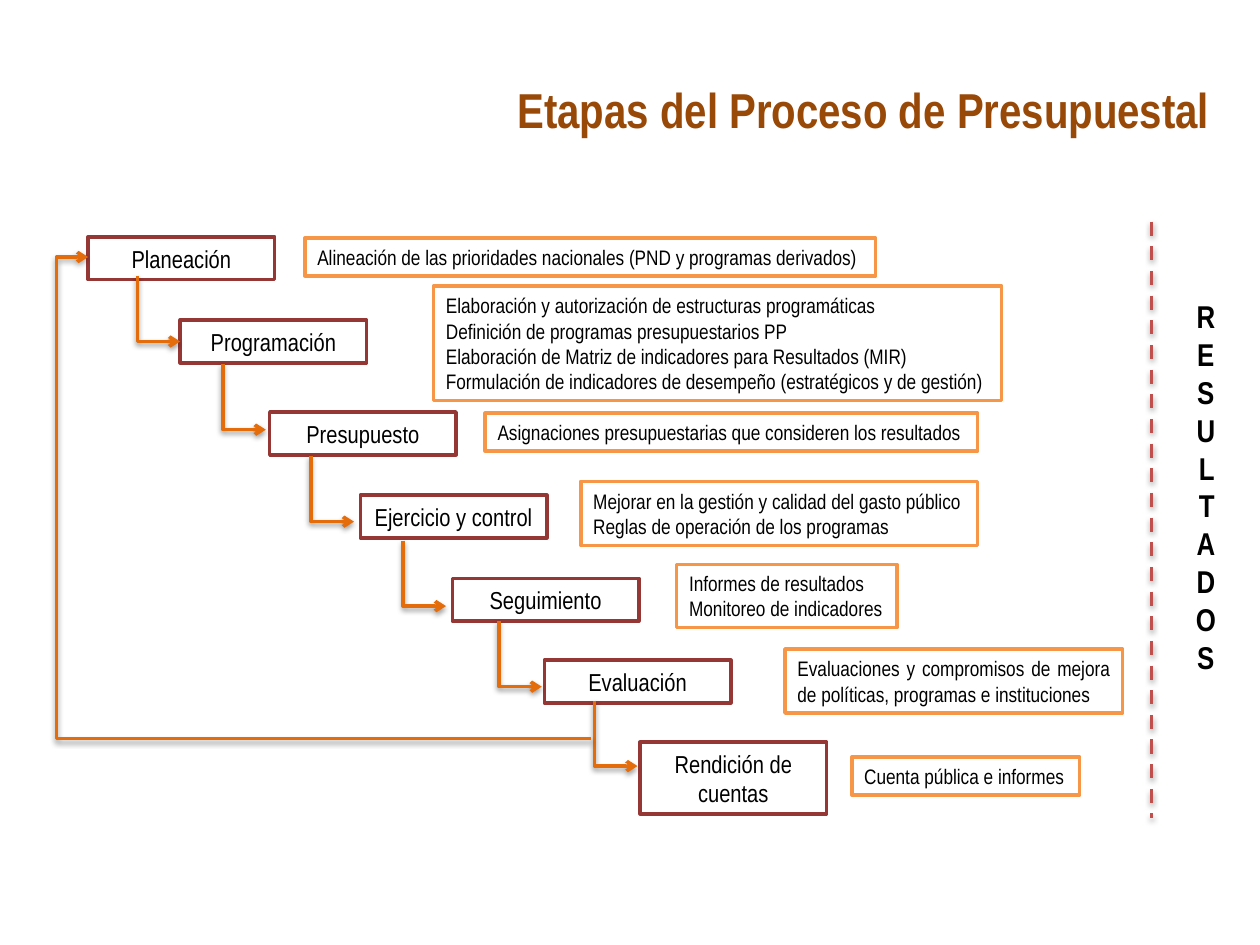
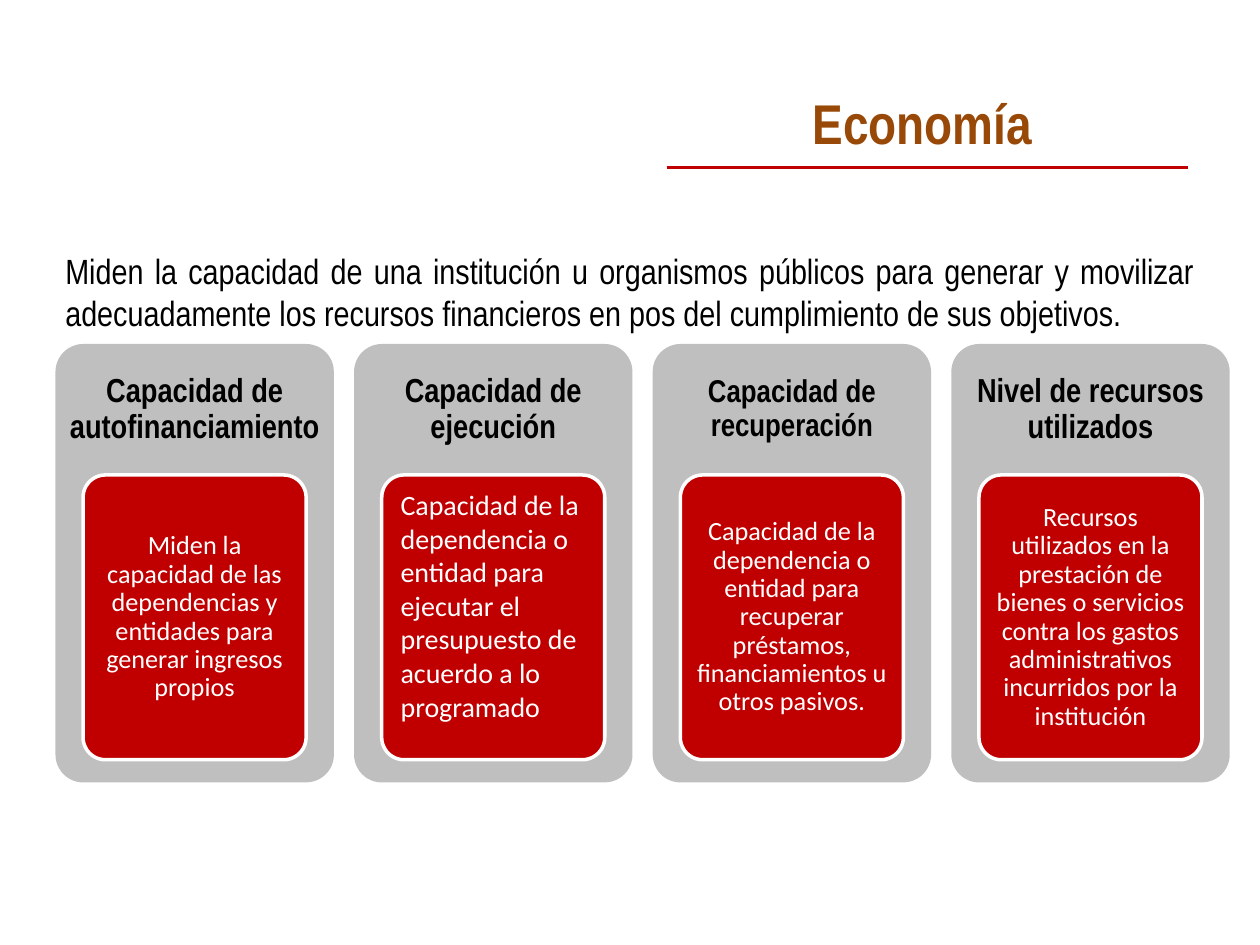
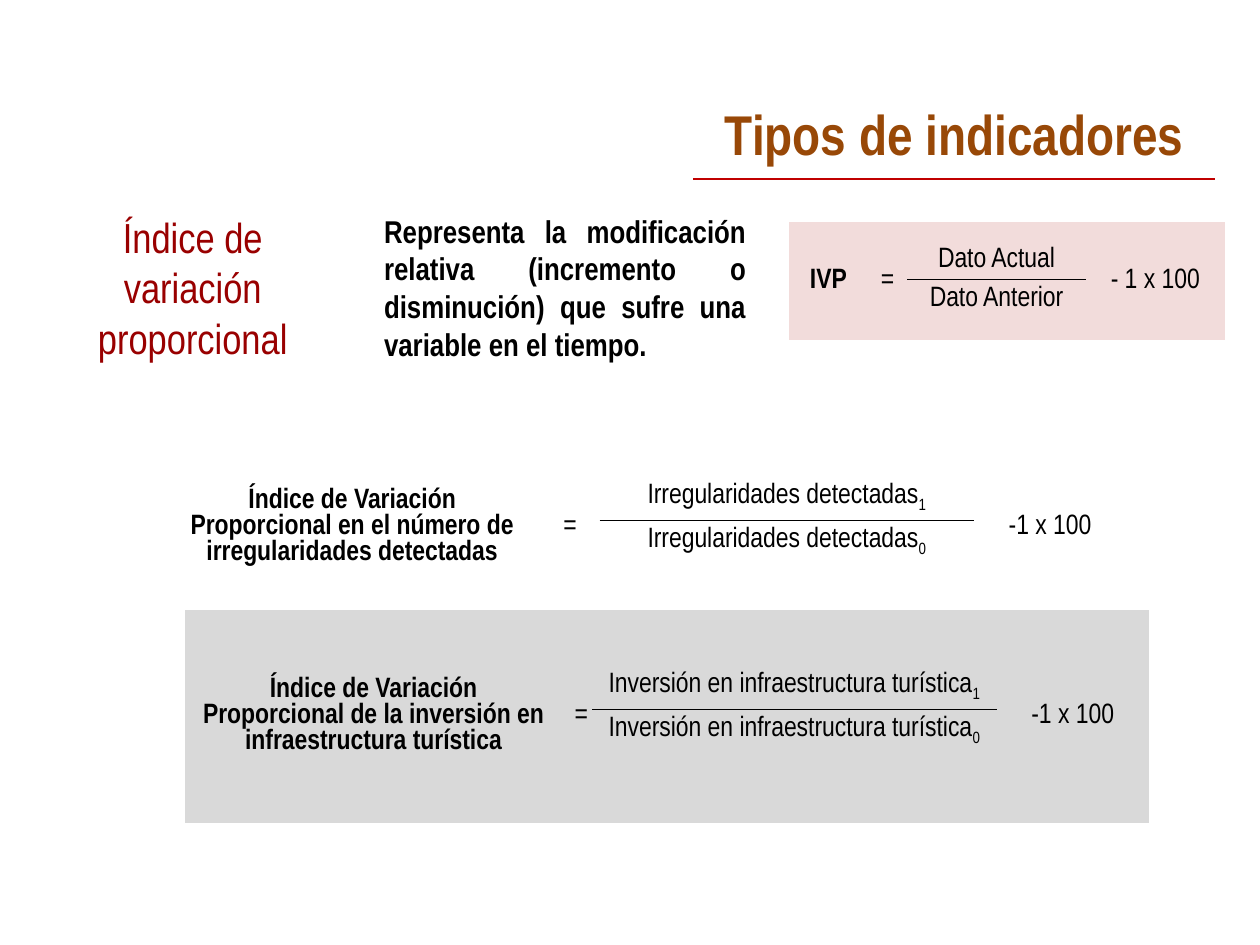
from lxml import etree
from pptx import Presentation
from pptx.dml.color import RGBColor
from pptx.enum.dml import MSO_LINE
from pptx.enum.shapes import MSO_CONNECTOR as LINK, MSO_SHAPE as SHAPE
from pptx.enum.text import MSO_ANCHOR as ANCHOR, MSO_AUTO_SIZE as AUTO, PP_ALIGN as ALIGN
from pptx.oxml import parse_xml
from pptx.oxml.ns import nsdecls, qn
from pptx.util import Inches, Pt

rgb = RGBColor.from_string
NARROW, BODY = "Arial Narrow", "Calibri"
BLACK, WHITE, BROWN, RED = "000000", "FFFFFF", "984807", "C00000"
ORANGE, AMBER, WINE, ROSE = "E46C0A", "F79646", "953735", "C0504D"
NO_STYLE = "{2D5ABB26-0587-4C30-8999-92F81FD0307C}"
SHADOW = (f'<a:effectLst {nsdecls("a")}><a:outerShdw blurRad="39370" dist="20320" dir="5400000" '
          'rotWithShape="0"><a:srgbClr val="000000"><a:alpha val="38000"/></a:srgbClr>'
          '</a:outerShdw></a:effectLst>')


def write(sp, text, size, color=BLACK, bold=False, align=ALIGN.CENTER, font=NARROW,
          spacing=None, wrap=True):
    """Fill a shape's text frame, one paragraph per line of text."""
    tf = sp.text_frame
    tf.text = text
    tf.word_wrap = wrap
    tf.auto_size = AUTO.NONE
    for p in tf.paragraphs:
        p.alignment = align
        p.line_spacing = spacing
        p.font.size, p.font.name, p.font.bold = Pt(size), font, bold
        p.font.color.rgb = rgb(color)
    return tf


def link(s, kind, x1, y1, x2, y2, color, width=2, arrow=False, shadow=True):
    """Add a line with an optional arrowhead and soft shadow."""
    cn = s.shapes.add_connector(kind, Inches(x1), Inches(y1), Inches(x2), Inches(y2))
    cn.line.color.rgb = rgb(color)
    cn.line.width = Pt(width)
    if arrow:
        etree.SubElement(cn.line._get_or_add_ln(), qn("a:tailEnd"), type="arrow")
    effects = SHADOW if shadow else f'<a:effectLst {nsdecls("a")}/>'
    cn._element.spPr.append(parse_xml(effects))
    return cn


prs = Presentation()
prs.slide_width, prs.slide_height = Inches(10), Inches(7.5)

# Slides and titles: text, size, box, left end and height of the rule
titles = [
    ("Etapas del Proceso de Presupuestal", 28, (3.98, 0.58, 5.74, 0.57), None),
    ("Economía", 32, (6.32, 0.65, 2, 0.64), (5.29, 1.33)),
    ("Tipos de indicadores", 32, (5.6, 0.74, 3.95, 0.64), (5.5, 1.42)),
]
slides = []
for text, size, box, rule in titles:
    s = prs.slides.add_slide(prs.slide_layouts[5])
    title = s.shapes.title
    title.left, title.top, title.width, title.height = map(Inches, box)
    write(title, text, size, BROWN, bold=True, wrap=False)
    if rule:
        x, y = rule
        link(s, LINK.STRAIGHT, x, y, x + 4.14, y, RED, 1.25, shadow=False)
    slides.append(s)
process, economy, indicators = slides

# Slide 1: cascade of stages
stages = [
    ("Planeación", 0.7, 1.88, 0.34),
    ("Programación", 1.43, 2.54, 0.34),
    ("Presupuesto", 2.14, 3.27, 0.34),
    ("Ejercicio y control", 2.86, 3.93, 0.34),
    ("Seguimiento", 3.59, 4.59, 0.34),
    ("Evaluación", 4.32, 5.24, 0.34),
    ("Rendición de cuentas", 5.08, 5.89, 0.57),
]
details = [
    ("Alineación de las prioridades nacionales (PND y programas derivados)",
     2.42, 1.89, 4.53, 0.3),
    ("Elaboración y autorización de estructuras programáticas\n"
     "Definición de programas presupuestarios PP\n"
     "Elaboración de Matriz de indicadores para Resultados (MIR)\n"
     "Formulación de indicadores de desempeño (estratégicos y de gestión)",
     3.44, 2.27, 4.51, 0.91),
    ("Asignaciones presupuestarias que consideren los resultados", 3.85, 3.28, 3.91, 0.3),
    ("Mejorar en la gestión y calidad del gasto público\n"
     "Reglas de operación de los programas", 4.61, 3.82, 3.15, 0.51),
    ("Informes de resultados\nMonitoreo de indicadores", 5.37, 4.48, 1.75, 0.5),
    ("Evaluaciones y compromisos de mejora de políticas, programas e instituciones",
     6.23, 5.15, 2.68, 0.51),
    ("Cuenta pública e informes", 6.76, 6.01, 1.81, 0.3),
]
boxes = [(text, x, y, 1.48, h, WINE, 14, ALIGN.CENTER, True) for text, x, y, h in stages]
boxes += [(*d, AMBER, 12, ALIGN.JUSTIFY, d[0].startswith("Evaluaciones")) for d in details]
for text, x, y, w, h, color, size, align, wrap in boxes:
    sp = process.shapes.add_shape(SHAPE.RECTANGLE, Inches(x), Inches(y), Inches(w), Inches(h))
    sp.shadow.inherit = False
    sp.fill.solid()
    sp.fill.fore_color.rgb = rgb(WHITE)
    sp.line.color.rgb = rgb(color)
    sp.line.width = Pt(2)
    write(sp, text, size, align=align, wrap=wrap)

# Elbow arrows go down, then right: a quarter turn of a mirrored two-part elbow
down, right = 0.52, 0.34
for x, y in [(1.09, 2.19), (1.77, 2.89), (2.47, 3.62), (3.2, 4.29), (3.96, 4.93), (4.72, 5.56)]:
    left, top = x + (right - down) / 2, y + (down - right) / 2
    cn = link(process, LINK.ELBOW, left + down, top, left, top + right, ORANGE, arrow=True)
    cn._element.spPr.find(qn("a:xfrm")).set("rot", "16200000")
    cn._element.spPr.find(qn("a:prstGeom")).set("prst", "bentConnector2")

# Feedback from evaluation to planning
cn = link(process, LINK.ELBOW, 4.69, 5.86, 0.7, 2.04, ORANGE, arrow=True)
guides = cn._element.spPr.find(qn("a:prstGeom")).get_or_add_avLst()
etree.SubElement(guides, qn("a:gd"), name="adj1", fmla="val 106300")

# Results column
cn = link(process, LINK.STRAIGHT, 9.14, 1.76, 9.14, 6.49, ROSE)
cn.line.dash_style = MSO_LINE.DASH
sp = process.shapes.add_textbox(Inches(9.3), Inches(2.14), Inches(0.54), Inches(3.44))
tf = write(sp, "RESULTADOS", 18, bold=True, wrap=False)
tf._txBody.bodyPr.set("vert", "wordArtVert")

# Slide 2: definition and four cards
sp = economy.shapes.add_textbox(Inches(0.42), Inches(1.93), Inches(9.16), Inches(0.77))
write(sp, "Miden la capacidad de una institución u organismos públicos para generar y movilizar "
      "adecuadamente los recursos financieros en pos del cumplimiento de sus objetivos.",
      20, align=ALIGN.JUSTIFY)
cards = [
    ("Capacidad de autofinanciamiento", 19,
     "Miden la capacidad de las dependencias y entidades para generar ingresos propios"),
    ("Capacidad de ejecución", 19,
     "Capacidad de la dependencia o entidad para ejecutar el presupuesto de acuerdo a lo "
     "programado"),
    ("Capacidad de recuperación", 18,
     "Capacidad de la dependencia o entidad para recuperar préstamos, financiamientos u otros "
     "pasivos."),
    ("Nivel de recursos utilizados", 19,
     "Recursos utilizados en la prestación de bienes o servicios contra los gastos "
     "administrativos incurridos por la institución"),
]
for i, (heading, size, body) in enumerate(cards):
    x = 0.44 + 2.37 * i
    panels = [(x, 2.73, 2.21, 3.48, "BFBFBF"), (x + 0.22, 3.77, 1.77, 2.26, RED)]
    card, inner = [economy.shapes.add_shape(SHAPE.ROUNDED_RECTANGLE, *map(Inches, p[:4]))
                   for p in panels]
    for sp, panel in zip((card, inner), panels):
        sp.adjustments[0] = 0.1
        sp.shadow.inherit = False
        sp.fill.solid()
        sp.fill.fore_color.rgb = rgb(panel[4])
    card.line.fill.background()
    inner.line.color.rgb = rgb(WHITE)
    inner.line.width = Pt(2)

    tf = write(card, heading, size, bold=True, spacing=0.9)
    tf.margin_left = tf.margin_right = tf.margin_top = Inches(0.01)
    tf.margin_bottom = Inches(2.45)
    if i == 1:
        tf = write(inner, body, 16, WHITE, align=ALIGN.LEFT, font=BODY)
        tf.vertical_anchor = ANCHOR.TOP
    else:
        tf = write(inner, body, 15, WHITE, font=BODY, spacing=0.9)
        tf.margin_left = tf.margin_right = Inches(0.04)
        tf.margin_top = tf.margin_bottom = Inches(0.03)

# Slide 3: name and definition of the index
sp = indicators.shapes.add_textbox(Inches(2.95), Inches(1.63), Inches(3.07), Inches(1.31))
write(sp, "Representa la modificación relativa (incremento o disminución) que sufre una variable "
      "en el tiempo.", 18, bold=True, align=ALIGN.JUSTIFY)
sp = indicators.shapes.add_textbox(Inches(0.43), Inches(1.63), Inches(2.2), Inches(1.31))
write(sp, "Índice de variación proporcional", 24, "990000")

# Formulas as tables: name = numerator over denominator, then factor
formulas = [
    (1.3, 3.34, [2.99, 0.47, 2.97, 1.21], [0.79, 0.9], WHITE,
     "Índice de Variación Proporcional en el número de irregularidades detectadas",
     ("Irregularidades detectadas", "1"), ("Irregularidades detectadas", "0"), "-1 x 100"),
    (6.26, 1.76, [0.63, 0.31, 1.42, 1.1], [0.46, 0.48], "F2DCDB",
     "IVP", ("Dato Actual",), ("Dato Anterior",), "- 1 x 100"),
    (1.47, 4.84, [2.99, 0.23, 3.21, 1.21], [0.79, 0.9], "D9D9D9",
     "Índice de Variación Proporcional de la inversión en infraestructura turística",
     ("Inversión en infraestructura turística", "1"),
     ("Inversión en infraestructura turística", "0"), "-1 x 100"),
]
for x, y, cols, rows, fill, name, numerator, denominator, factor in formulas:
    frame = indicators.shapes.add_table(2, 4, Inches(x), Inches(y),
                                        Inches(sum(cols)), Inches(sum(rows)))
    table = frame.table
    table._tbl.tblPr.find(qn("a:tableStyleId")).text = NO_STYLE
    for col, w in zip(table.columns, cols):
        col.width = Inches(w)
    for row, h in zip(table.rows, rows):
        row.height = Inches(h)
    for cell in table.iter_cells():
        cell.fill.solid()
        cell.fill.fore_color.rgb = rgb(fill)
    for c in (0, 1, 3):
        table.cell(0, c).merge(table.cell(1, c))

    contents = [
        (0, 0, (name,), ANCHOR.MIDDLE, None), (0, 1, ("=",), ANCHOR.MIDDLE, None),
        (0, 2, numerator, ANCHOR.BOTTOM, "lnB"), (1, 2, denominator, ANCHOR.TOP, "lnT"),
        (0, 3, (factor,), ANCHOR.MIDDLE, None),
    ]
    for row, col, parts, anchor, border in contents:
        cell = table.cell(row, col)
        cell.vertical_anchor = anchor
        p = cell.text_frame.paragraphs[0]
        p.alignment = ALIGN.CENTER
        p.font.size, p.font.name, p.font.bold = Pt(16), NARROW, col == 0
        p.font.color.rgb = rgb(BLACK)
        for k, part in enumerate(parts):
            r = p.add_run()
            r.text = part
            if k:
                r._r.get_or_add_rPr().set("baseline", "-25000")
        if border:
            cell._tc.get_or_add_tcPr().insert(0, parse_xml(
                f'<a:{border} {nsdecls("a")} w="12700"><a:solidFill><a:srgbClr val="{BLACK}"/>'
                f'</a:solidFill></a:{border}>'))

prs.save("out.pptx")
